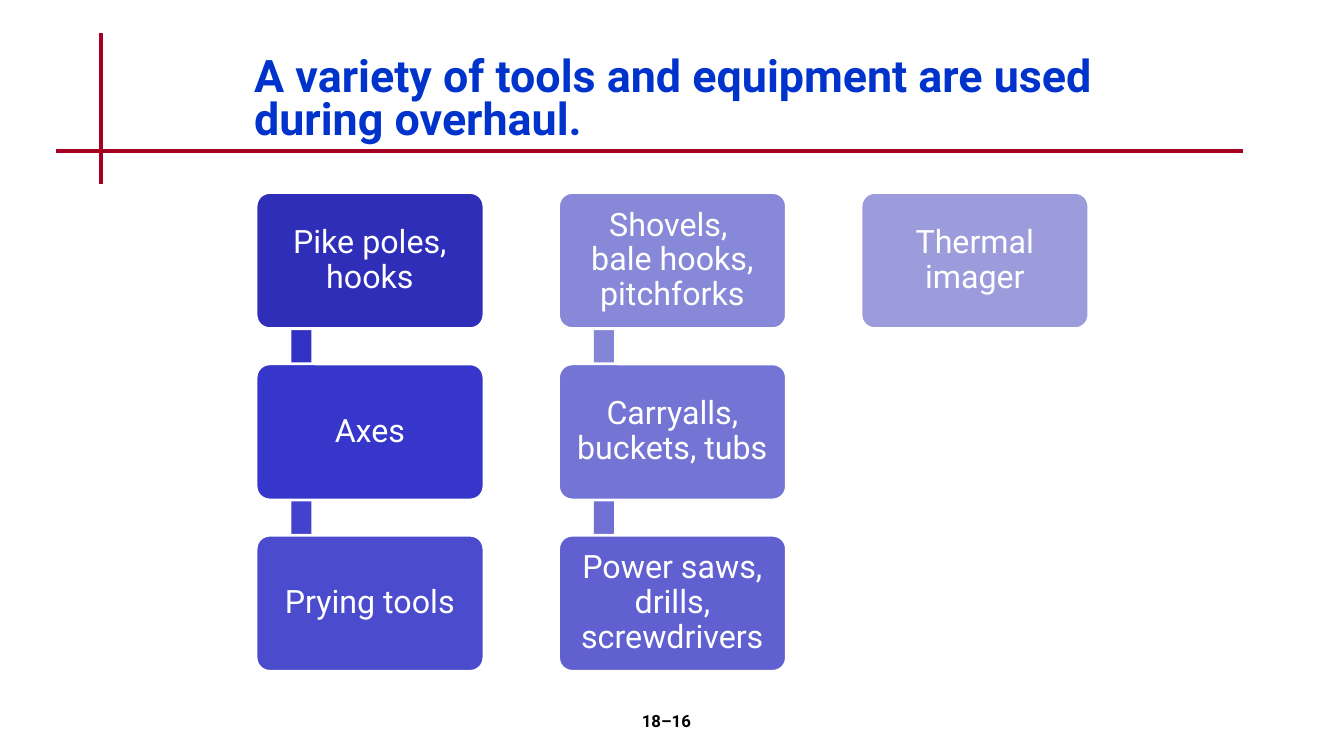
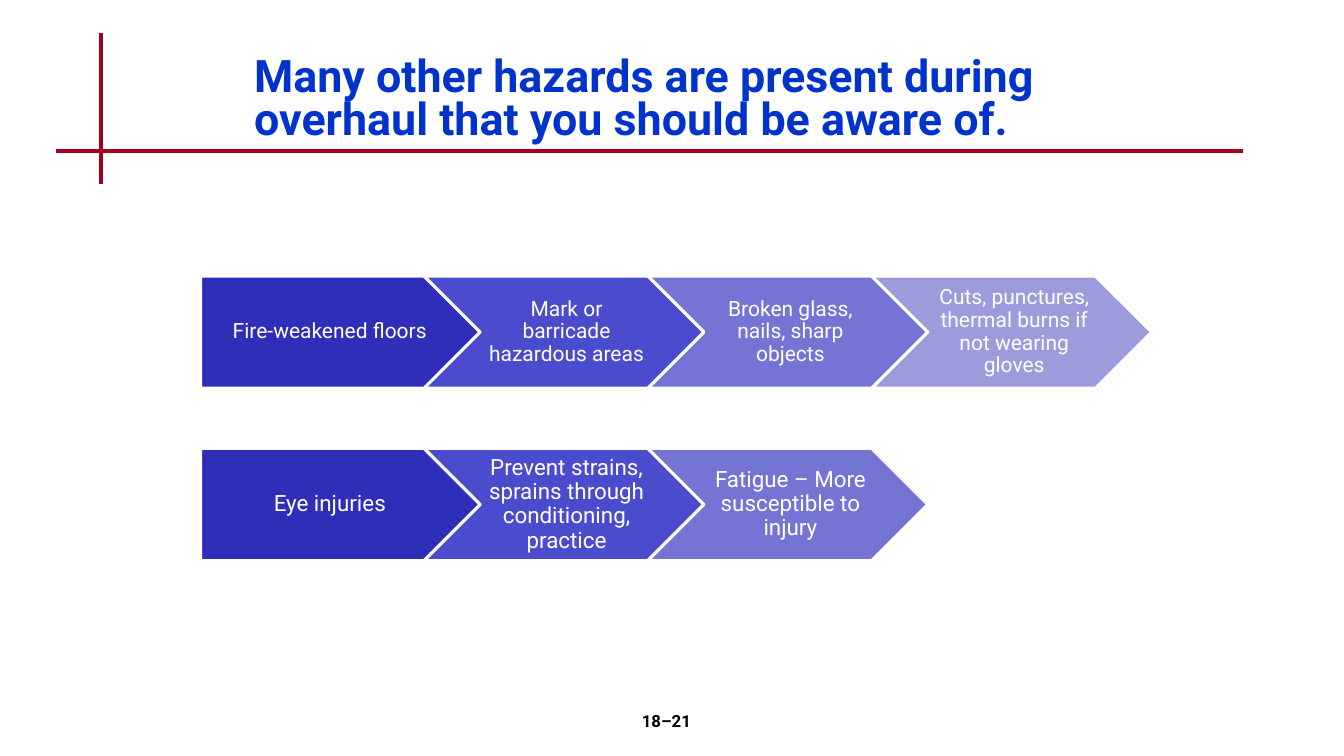
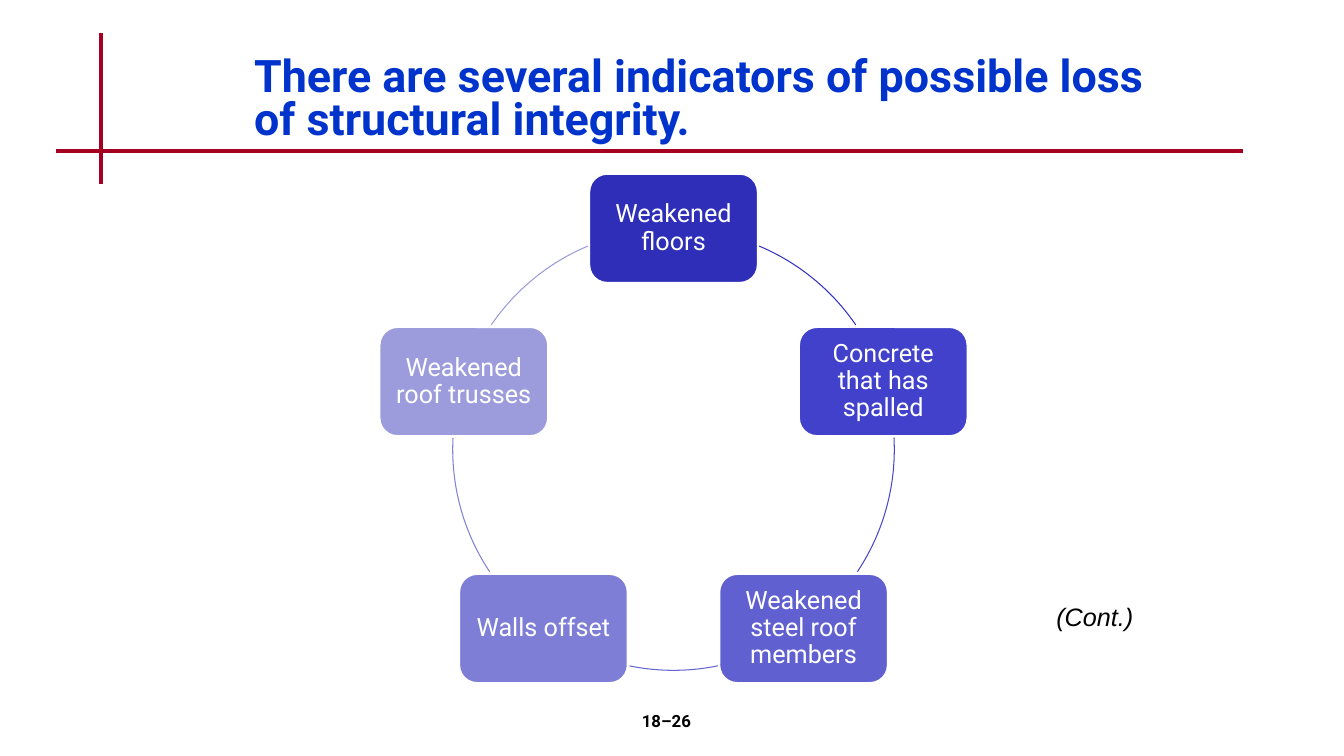
"""Build three slides about tools, hazards and warning signs during fire overhaul."""
import math
from dataclasses import dataclass
from typing import Optional

import lxml.etree
import pptx
import pptx.dml.color
import pptx.enum.shapes
import pptx.enum.text
import pptx.oxml.ns
import pptx.util

EMU_PER_PX = 9144
SHAPES = pptx.enum.shapes.MSO_SHAPE
ALIGN = pptx.enum.text.PP_ALIGN
ANCHOR = pptx.enum.text.MSO_ANCHOR


@dataclass(frozen=True)
class Theme:
    font: str = "Roboto"
    note_font: str = "Arial"
    title: str = "0033CC"
    rule: str = "A50021"
    ink: str = "000000"
    paper: str = "FFFFFF"
    title_size: int = 32
    page_size: int = 12
    tool_size: int = 23
    sign_size: int = 18
    title_spacing: float = 0.8
    label_spacing: float = 0.9
    rule_width: float = 3
    outline_width: float = 2
    arc_width: float = 0.75


THEME = Theme()


@dataclass(frozen=True)
class Box:
    left: int
    top: int
    width: int
    height: int


@dataclass(frozen=True)
class TextStyle:
    size: int
    color: str
    font: str = THEME.font
    bold: bool = False
    italic: bool = False
    align: ALIGN = ALIGN.CENTER
    spacing: Optional[float] = None


@dataclass(frozen=True)
class Tool:
    text: str
    fill: str
    bar: Optional[str] = None


@dataclass(frozen=True)
class HazardRow:
    top: int
    size: int
    inset: int
    labels: tuple[str, ...]


@dataclass(frozen=True)
class Sign:
    text: str
    fill: str
    arc_color: str
    arc_start: float
    arc_end: float


TITLE_BOX = Box(242, 50, 918, 100)
PAGE_BOX = Box(522, 700, 278, 50)
CONTINUED_BOX = Box(967, 592, 167, 40)
RULES = ((100, 33, 100, 183), (56, 150, 1233, 150))

TITLE_STYLE = TextStyle(THEME.title_size, THEME.title, bold=True,
                        align=ALIGN.LEFT, spacing=THEME.title_spacing)
PAGE_STYLE = TextStyle(THEME.page_size, THEME.ink, bold=True)
CONTINUED_STYLE = TextStyle(18, THEME.ink, THEME.note_font, italic=True,
                            align=ALIGN.RIGHT)

TOOL_COLUMNS = (
    (Tool("Pike poles, hooks", "2E2EB9", "3131C3"),
     Tool("Axes", "3636CA", "4242CC"),
     Tool("Prying tools", "4B4BCD")),
    (Tool("Shovels, \nbale hooks, pitchforks", "8888D8", "8585D8"),
     Tool("Carryalls, buckets, tubs", "7474D4", "6F6FD4"),
     Tool("Power saws, drills, screwdrivers", "6060D0")),
    (Tool("Thermal imager", "9C9CDD"),),
)

HAZARD_FILLS = ("2E2EB9", "4B4BCD", "7474D4", "9C9CDD")
HAZARD_ROWS = (
    HazardRow(274, 15, 4, (
        "Fire-weakened floors",
        "Mark or barricade hazardous areas",
        "Broken glass, nails, sharp objects",
        "Cuts, punctures, thermal burns if not wearing gloves")),
    HazardRow(445, 16, 5, (
        "Eye injuries",
        "Prevent strains, sprains through conditioning, practice",
        "Fatigue – More susceptible to injury")),
)

SIGNS = (
    Sign("Weakened floors", "2E2EB9", "3131C3", 292.8, 325.6),
    Sign("Concrete that has spalled", "4141CB", "4747CD", 356.9, 33.6),
    Sign("Weakened steel roof members", "6060D0", "6464D2", 78.4, 101.6),
    Sign("Walls offset", "7E7ED6", "8080D7", 146.4, 183.1),
    Sign("Weakened roof trusses", "9C9CDD", "9B9BDD", 214.4, 247.2),
)


def px(length: float) -> int:
    """Turn pixels into EMU."""
    return round(length * EMU_PER_PX)


def rgb(color: str) -> pptx.dml.color.RGBColor:
    """Turn a hexadecimal string into a colour."""
    return pptx.dml.color.RGBColor.from_string(color)


def place(shape, box: Box) -> None:
    """Move and size a shape."""
    shape.left, shape.top = px(box.left), px(box.top)
    shape.width, shape.height = px(box.width), px(box.height)


def write(frame, text: str, style: TextStyle) -> None:
    """Write one styled paragraph, with line breaks between its runs."""
    frame.word_wrap = True
    frame.auto_size = pptx.enum.text.MSO_AUTO_SIZE.NONE
    paragraph = frame.paragraphs[0]
    paragraph.alignment = style.align
    if style.spacing:
        paragraph.line_spacing = style.spacing
    for index, line in enumerate(text.split("\n")):
        if index:
            paragraph.add_line_break()
        run = paragraph.add_run()
        run.text = line
        run.font.name = style.font
        run.font.size = pptx.util.Pt(style.size)
        run.font.bold = style.bold
        run.font.italic = style.italic
        run.font.color.rgb = rgb(style.color)


def add_text(slide, box: Box, text: str, style: TextStyle) -> None:
    """Add a text box."""
    textbox = slide.shapes.add_textbox(0, 0, 0, 0)
    place(textbox, box)
    write(textbox.text_frame, text, style)


def add_shape(slide, kind: SHAPES, box: Box, fill: Optional[str],
              line: Optional[str] = None, width: float = THEME.outline_width):
    """Add a flat preset shape with an optional fill and outline."""
    shape = slide.shapes.add_shape(kind, 0, 0, 0, 0)
    place(shape, box)
    shape.shadow.inherit = False
    if fill:
        shape.fill.solid()
        shape.fill.fore_color.rgb = rgb(fill)
    else:
        shape.fill.background()
    if line:
        shape.line.color.rgb = rgb(line)
        shape.line.width = pptx.util.Pt(width)
    else:
        shape.line.fill.background()
    return shape


def add_label(slide, kind: SHAPES, box: Box, fill: str, text: str, size: int,
              insets: tuple[int, int, int, int]):
    """Add a white-outlined shape with a centred label; insets run from the left clockwise."""
    shape = add_shape(slide, kind, box, fill, THEME.paper)
    frame = shape.text_frame
    frame.vertical_anchor = ANCHOR.MIDDLE
    (frame.margin_left, frame.margin_top,
     frame.margin_right, frame.margin_bottom) = map(px, insets)
    write(frame, text, TextStyle(size, THEME.paper, spacing=THEME.label_spacing))
    return shape


def add_rule(slide, ends: tuple[int, int, int, int]):
    """Add one red rule line."""
    rule = slide.shapes.add_connector(
        pptx.enum.shapes.MSO_CONNECTOR.STRAIGHT, *map(px, ends))
    rule.line.color.rgb = rgb(THEME.rule)
    rule.line.width = pptx.util.Pt(THEME.rule_width)
    lxml.etree.SubElement(rule.element.spPr, pptx.oxml.ns.qn("a:effectLst"))
    return rule


def prepare_layout(presentation, layout) -> None:
    """Give the layout its title place and crossed rules."""
    for placeholder in list(layout.placeholders)[1:]:
        placeholder.element.getparent().remove(placeholder.element)
    place(layout.placeholders[0], TITLE_BOX)
    slide = presentation.slides[0]
    for rule in [add_rule(slide, ends) for ends in RULES]:
        layout.element.cSld.spTree.append(rule.element)


def add_slide(presentation, layout, title: str, page: str,
              title_width: int = TITLE_BOX.width):
    """Add a slide with its title and page number."""
    slide = presentation.slides.add_slide(layout)
    heading = slide.shapes.title
    place(heading, Box(TITLE_BOX.left, TITLE_BOX.top, title_width, TITLE_BOX.height))
    heading.text_frame.vertical_anchor = ANCHOR.MIDDLE
    write(heading.text_frame, title, TITLE_STYLE)
    add_text(slide, PAGE_BOX, page, PAGE_STYLE)
    return slide


def draw_tools(slide) -> None:
    """Draw columns of tool boxes joined by short bars."""
    cells = [(Box(254 + 300 * column, 191 + 170 * row, 226, 135), tool)
             for column, tools in enumerate(TOOL_COLUMNS)
             for row, tool in enumerate(tools)]
    for box, tool in cells:
        if tool.bar:
            bar = Box(box.left + 35, box.top + 34, 20, 168)
            add_shape(slide, SHAPES.RECTANGLE, bar, tool.bar)
    for box, tool in cells:
        shape = add_label(slide, SHAPES.ROUNDED_RECTANGLE, box, tool.fill,
                          tool.text, THEME.tool_size, (10, 10, 10, 10))
        shape.adjustments[0] = 0.1


def draw_hazards(slide) -> None:
    """Draw rows of hazard arrows."""
    for row in HAZARD_ROWS:
        for index, (text, fill) in enumerate(zip(row.labels, HAZARD_FILLS)):
            kind = SHAPES.CHEVRON if index else SHAPES.PENTAGON
            left_inset = 7 if index else 9
            add_label(slide, kind, Box(199 + 222 * index, row.top, 277, 111), fill,
                      text, row.size, (left_inset, row.inset, 2, row.inset))


def draw_signs(slide) -> None:
    """Draw warning signs around a circle, with an arc after each."""
    center_x, center_y, radius = 668, 446, 219
    width, height = 168, 109
    circle = Box(center_x - radius, center_y - radius, 2 * radius, 2 * radius)
    for index, sign in enumerate(SIGNS):
        angle = math.tau * index / len(SIGNS)
        left = round(center_x + radius * math.sin(angle) - width / 2)
        top = round(center_y - radius * math.cos(angle) - height / 2)
        add_label(slide, SHAPES.ROUNDED_RECTANGLE, Box(left, top, width, height),
                  sign.fill, sign.text, THEME.sign_size, (7, 7, 7, 7))
        arc = add_shape(slide, SHAPES.ARC, circle, None, sign.arc_color, THEME.arc_width)
        arc.adjustments[0] = sign.arc_start * 0.6
        arc.adjustments[1] = sign.arc_end * 0.6
    add_text(slide, CONTINUED_BOX, "(Cont.)", CONTINUED_STYLE)


def main() -> None:
    """Build and save the presentation."""
    presentation = pptx.Presentation()
    presentation.slide_width, presentation.slide_height = px(1333), px(750)
    layout = presentation.slide_layouts.get_by_name("Title Only")
    draw_tools(add_slide(
        presentation, layout,
        "A variety of tools and equipment are used during overhaul.", "18–16"))
    draw_hazards(add_slide(
        presentation, layout,
        "Many other hazards are present during overhaul that you should be aware of.",
        "18–21"))
    draw_signs(add_slide(
        presentation, layout,
        "There are several indicators of possible loss of structural integrity.",
        "18–26", title_width=906))
    prepare_layout(presentation, layout)
    presentation.save("out.pptx")


if __name__ == "__main__":
    main()
